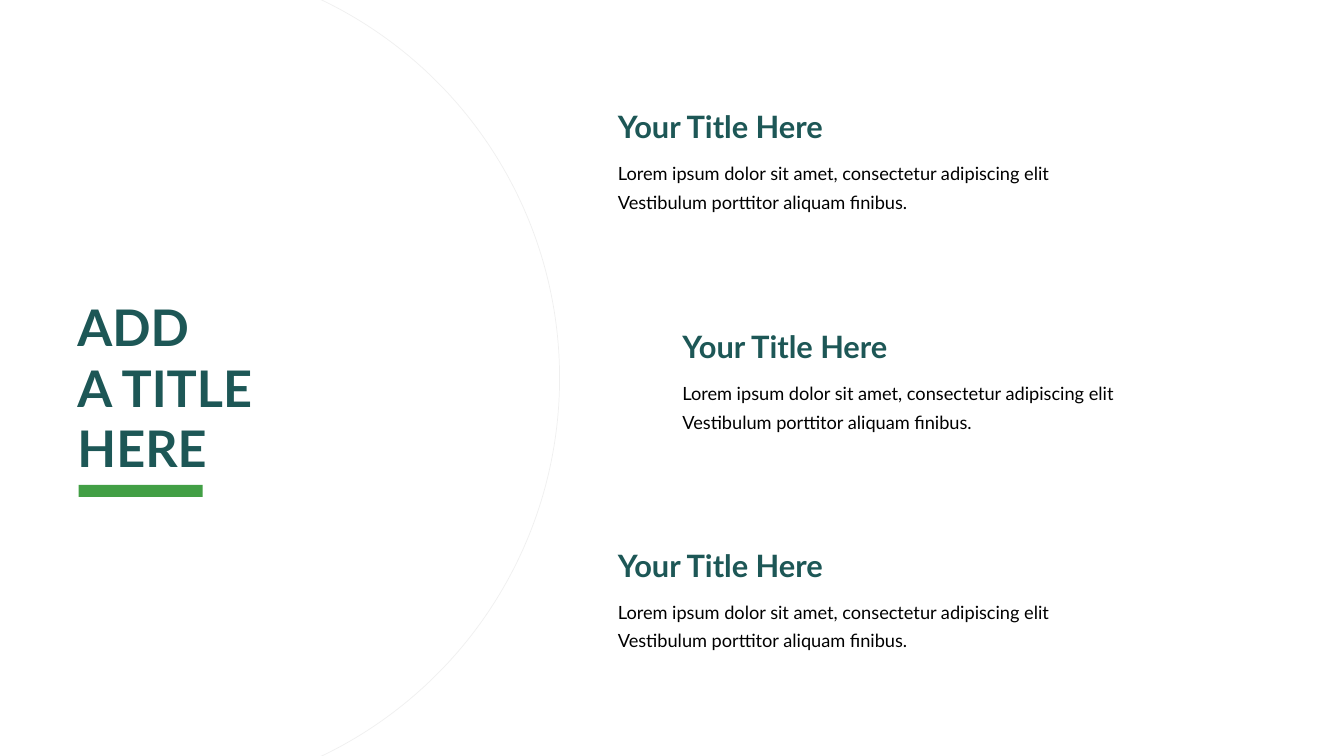
import pptx
import pptx.dml.color
import pptx.enum.shapes
import pptx.enum.text
import pptx.oxml
import pptx.oxml.ns
import pptx.util

Inches = pptx.util.Inches
Pt = pptx.util.Pt
SHAPES = pptx.enum.shapes.MSO_SHAPE


def color(hex_string):
    return pptx.dml.color.RGBColor.from_string(hex_string)


class SlideBuilder:
    font = "Lato"
    heading = "1D5756"
    body = "000000"
    accent = "429F45"
    outline = "D9D9D9"

    def __init__(self, slide):
        self.slide = slide

    def shape(self, kind, left, top, width, height):
        shape = self.slide.shapes.add_shape(
            kind, Inches(left), Inches(top), Inches(width), Inches(height))
        shape.shadow.inherit = False
        return shape

    def bar(self, left, top, width, height):
        shape = self.shape(SHAPES.RECTANGLE, left, top, width, height)
        shape.fill.solid()
        shape.fill.fore_color.rgb = color(self.accent)
        shape.line.fill.background()

    def ring(self, left, top, diameter, opacity):
        shape = self.shape(SHAPES.OVAL, left, top, diameter, diameter)
        shape.fill.background()
        shape.line.color.rgb = color(self.outline)
        shape.line.width = Pt(0.5)
        line_color = shape.line._ln.find(".//" + pptx.oxml.ns.qn("a:srgbClr"))
        line_color.append(pptx.oxml.parse_xml(
            f'<a:alpha {pptx.oxml.ns.nsdecls("a")} val="{opacity * 1000}"/>'))

    def text(self, left, top, width, height, text, size, text_color,
             bold=False, wrap=False, line_spacing=None):
        shape = self.slide.shapes.add_textbox(
            Inches(left), Inches(top), Inches(width), Inches(height))
        text_frame = shape.text_frame
        text_frame.text = text
        text_frame.word_wrap = wrap
        text_frame.auto_size = pptx.enum.text.MSO_AUTO_SIZE.SHAPE_TO_FIT_TEXT
        for paragraph in text_frame.paragraphs:
            paragraph.line_spacing = line_spacing
            for run in paragraph.runs:
                run.font.name = self.font
                run.font.size = Pt(size)
                run.font.bold = bold
                run.font.color.rgb = color(text_color)

    def item(self, left, top, title, description):
        self.text(left, top + 0.48, 4.7, 0.66, description, 13, self.body,
                  line_spacing=1.3)
        self.text(left, top, 2.91, 0.47, title, 22, self.heading,
                  bold=True, wrap=True)


def main():
    presentation = pptx.Presentation()
    presentation.slide_width = Inches(13.33)
    presentation.slide_height = Inches(7.5)
    slide = presentation.slides.add_slide(presentation.slide_layouts[6])
    builder = SlideBuilder(slide)

    builder.ring(-2.77, -0.41, 8.32, opacity=40)
    builder.text(0.67, 2.89, 2.06, 1.92, "ADD\nA TITLE\nHERE", 36,
                 builder.heading, bold=True)
    description = ("Lorem ipsum dolor sit amet, consectetur adipiscing elit\n"
                   "Vestibulum porttitor aliquam finibus.")
    for left, top in ((6.03, 1.02), (6.67, 3.2), (6.03, 5.37)):
        builder.item(left, top, "Your Title Here", description)
    builder.bar(0.78, 4.81, 1.23, 0.12)

    presentation.save("out.pptx")


if __name__ == "__main__":
    main()
